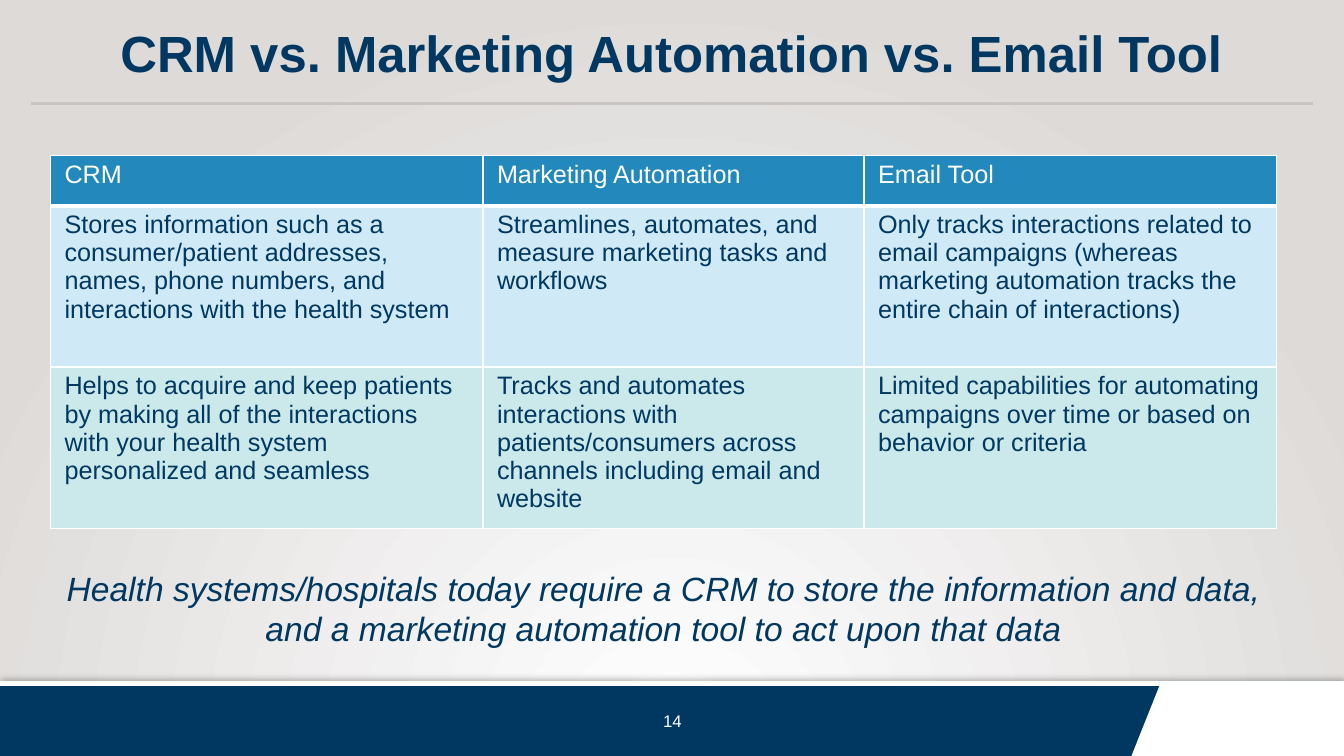
from lxml.etree import SubElement
from pptx import Presentation
from pptx.dml.color import RGBColor
from pptx.enum.shapes import MSO_CONNECTOR, MSO_SHAPE
from pptx.enum.text import MSO_ANCHOR, PP_ALIGN
from pptx.oxml import parse_xml
from pptx.oxml.ns import nsdecls, qn
from pptx.util import Inches, Pt

NAVY = RGBColor(0x00, 0x38, 0x61)
WHITE = RGBColor(0xFF, 0xFF, 0xFF)
OFF_WHITE = RGBColor(0xFE, 0xFF, 0xFF)
RULE_GRAY = RGBColor(0xC9, 0xC4, 0xC1)
BACKDROP_GRAY = RGBColor(0xDD, 0xDA, 0xD8)
HEADER_BLUE = RGBColor(0x23, 0x89, 0xBC)
PALE_BLUE = RGBColor(0xCF, 0xE9, 0xF6)
PALE_TEAL = RGBColor(0xCB, 0xE8, 0xEA)

FONT = "Arial"
COLUMN_WIDTHS = [4.29, 3.78, 4.09]
ROW_HEIGHTS = [0.5, 1.6, 1.6]
ROW_STYLES = [(HEADER_BLUE, OFF_WHITE), (PALE_BLUE, NAVY), (PALE_TEAL, NAVY)]
COMPARISON = [
    ["CRM", "Marketing Automation", "Email Tool"],
    [
        "Stores information such as a consumer/patient addresses, names, phone numbers, "
        "and interactions with the health system",
        "Streamlines, automates, and measure marketing tasks and workflows",
        "Only tracks interactions related to email campaigns (whereas marketing automation "
        "tracks the entire chain of interactions)",
    ],
    [
        "Helps to acquire and keep patients by making all of the interactions with "
        "your health system personalized and seamless",
        "Tracks and automates interactions with patients/consumers across channels "
        "including email and website",
        "Limited capabilities for automating campaigns over time or based on behavior or criteria",
    ],
]


def paint_background(slide):
    slide.element.cSld.insert(0, parse_xml(
        f'<p:bg {nsdecls("p", "a")}><p:bgPr><a:gradFill rotWithShape="1"><a:gsLst>'
        f'<a:gs pos="1000"><a:srgbClr val="{WHITE}"/></a:gs>'
        f'<a:gs pos="100000"><a:srgbClr val="{BACKDROP_GRAY}"/></a:gs></a:gsLst>'
        '<a:path path="circle"><a:fillToRect l="50000" t="130000" r="50000" b="-30000"/></a:path>'
        '</a:gradFill><a:effectLst/></p:bgPr></p:bg>'))


def fill_plain(shape, color):
    shape.shadow.inherit = False
    shape.fill.solid()
    shape.fill.fore_color.rgb = color
    shape.line.fill.background()


def add_footer_band(slide):
    band = slide.shapes.add_shape(
        MSO_SHAPE.RECTANGLE, Inches(0), Inches(6.78), Inches(13.33), Inches(0.74))
    fill_plain(band, NAVY)
    effects = band.element.spPr.find(qn("a:effectLst"))
    effects.append(parse_xml(
        f'<a:outerShdw {nsdecls("a")} blurRad="{Pt(4)}" dist="{Pt(3)}" dir="16200000" '
        'algn="b" rotWithShape="0"><a:srgbClr val="000000"><a:alpha val="25000"/>'
        '</a:srgbClr></a:outerShdw>'))


def add_footer_corner(slide):
    outline = slide.shapes.build_freeform(Inches(11.51), Inches(6.78))
    outline.add_line_segments([(Inches(x), Inches(y)) for x, y in
                               [(13.34, 6.78), (13.34, 7.53), (11.21, 7.53)]])
    fill_plain(outline.convert_to_shape(), WHITE)


def add_rule(slide, start, end, y, color, width):
    rule = slide.shapes.add_connector(
        MSO_CONNECTOR.STRAIGHT, Inches(start), Inches(y), Inches(end), Inches(y))
    rule.line.color.rgb = color
    rule.line.width = Pt(width)
    SubElement(rule.element.spPr, qn("a:effectLst"))


def add_run(paragraph, text, size, color, bold=False, italic=False):
    run = paragraph.add_run()
    run.text = text
    run.font.name = FONT
    run.font.size = Pt(size)
    run.font.color.rgb = color
    run.font.bold = bold
    run.font.italic = italic


def add_centered_text(slide, box, text, size, color, anchor=MSO_ANCHOR.MIDDLE, **emphasis):
    frame = slide.shapes.add_textbox(*map(Inches, box)).text_frame
    frame.word_wrap = True
    frame.vertical_anchor = anchor
    paragraph = frame.paragraphs[0]
    paragraph.alignment = PP_ALIGN.CENTER
    add_run(paragraph, text, size, color, **emphasis)


def draw_borders(cell, bottom_width):
    properties = cell._tc.get_or_add_tcPr()
    for side, width in [("L", 1), ("R", 1), ("T", 1), ("B", bottom_width)]:
        properties.append(parse_xml(
            f'<a:ln{side} {nsdecls("a")} w="{Pt(width)}"><a:solidFill>'
            f'<a:srgbClr val="{OFF_WHITE}"/></a:solidFill></a:ln{side}>'))


def fill_cell(cell, text, fill, color, bottom_width):
    cell.margin_left = cell.margin_right = Inches(0.14)
    cell.margin_top = cell.margin_bottom = Inches(0.05)
    draw_borders(cell, bottom_width)
    cell.fill.solid()
    cell.fill.fore_color.rgb = fill
    add_run(cell.text_frame.paragraphs[0], text, 18, color)


def add_comparison(slide):
    table = slide.shapes.add_table(
        len(ROW_HEIGHTS), len(COLUMN_WIDTHS), Inches(0.5), Inches(1.54),
        Inches(sum(COLUMN_WIDTHS)), Inches(sum(ROW_HEIGHTS))).table
    table.horz_banding = False
    table.first_row = True
    for column, width in zip(table.columns, COLUMN_WIDTHS):
        column.width = Inches(width)
    for index, (row, height) in enumerate(zip(table.rows, ROW_HEIGHTS)):
        row.height = Inches(height)
        bottom_width = 3 if index == 0 else 1
        for cell, text in zip(row.cells, COMPARISON[index]):
            fill_cell(cell, text, *ROW_STYLES[index], bottom_width)


def main():
    deck = Presentation()
    deck.slide_width = Inches(13.33)
    deck.slide_height = Inches(7.5)
    slide = deck.slides.add_slide(deck.slide_layouts[6])
    paint_background(slide)
    add_footer_band(slide)
    add_footer_corner(slide)
    add_rule(slide, 13.34, -0.01, 6.78, OFF_WHITE, 3)
    add_rule(slide, 0.31, 13.02, 1.03, RULE_GRAY, 2.25)
    add_comparison(slide)
    add_centered_text(slide, (6.32, 6.95, 0.7, 0.4), "14", 12, OFF_WHITE)
    add_centered_text(
        slide, (0.5, 5.58, 12.16, 0.91),
        "Health systems/hospitals today require a CRM to store the information and data, "
        "and a marketing automation tool to act upon that data",
        24, NAVY, anchor=MSO_ANCHOR.TOP, italic=True)
    add_centered_text(slide, (0.31, 0, 12.71, 1.03),
                      "CRM vs. Marketing Automation vs. Email Tool", 36.3, NAVY, bold=True)
    deck.save("out.pptx")


if __name__ == "__main__":
    main()
